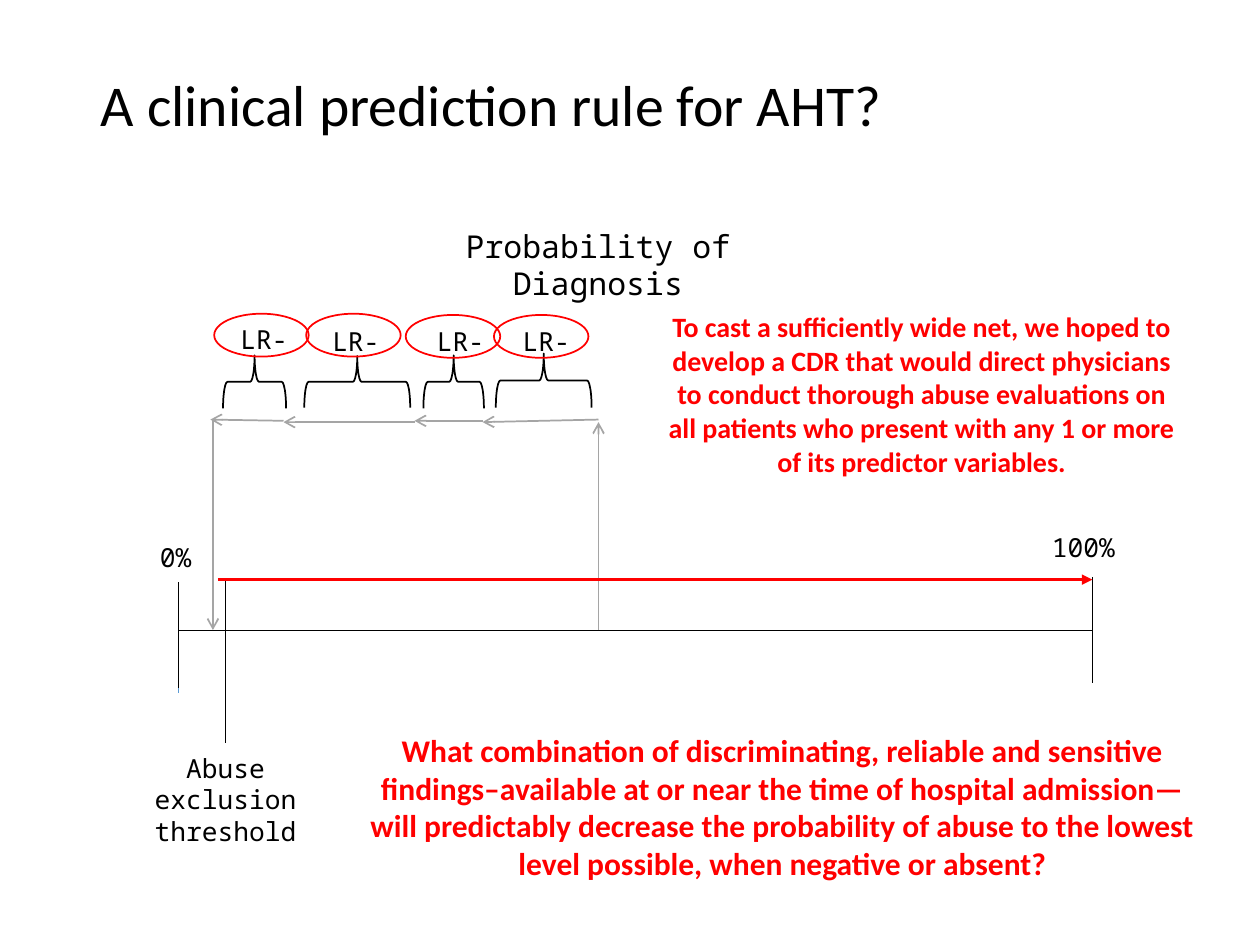
from pptx import Presentation
from pptx.dml.color import RGBColor
from pptx.enum.shapes import MSO_CONNECTOR, MSO_SHAPE
from pptx.enum.text import MSO_ANCHOR, PP_ALIGN
from pptx.oxml.ns import qn
from pptx.util import Inches, Pt
from lxml import etree

BLACK, RED, GREY, BLUE = "000000", "FF0000", "A5A5A5", "5B9BD5"
MONO, SANS = "Noto Sans Mono", "Calibri"

deck = Presentation()
deck.slide_width, deck.slide_height = Inches(10), Inches(7.5)
page = deck.slides.add_slide(deck.slide_layouts[6])


def add_text(text, left, top, width, height, size, font=MONO, color=BLACK,
             bold=False, align=PP_ALIGN.CENTER):
    box = page.shapes.add_textbox(Inches(left), Inches(top), Inches(width), Inches(height))
    box.text_frame.word_wrap = True
    para = box.text_frame.paragraphs[0]
    para.alignment = align
    span = para.add_run()
    span.text = text
    span.font.name, span.font.size, span.font.bold = font, Pt(size), bold
    span.font.color.rgb = RGBColor.from_string(color)
    return box


def add_line(x1, y1, x2, y2, color=BLACK, weight=0.5, arrow=None):
    line = page.shapes.add_connector(
        MSO_CONNECTOR.STRAIGHT, Inches(x1), Inches(y1), Inches(x2), Inches(y2))
    line.line.color.rgb = RGBColor.from_string(color)
    line.line.width = Pt(weight)
    if arrow:
        etree.SubElement(line.line._get_or_add_ln(), qn("a:tailEnd"), type=arrow)
    etree.SubElement(line._element.spPr, qn("a:effectLst"))


# Title
title = add_text("A clinical prediction rule for AHT?", 0.7, 0.5, 8.62, 0.71, 33,
                 SANS, align=PP_ALIGN.LEFT)
title.text_frame.vertical_anchor = MSO_ANCHOR.MIDDLE
title.text_frame.paragraphs[0].line_spacing = 0.9

# Probability axis with end ticks and exclusion threshold
add_text("Probability of Diagnosis", 3.12, 1.75, 3.25, 0.4, 18)
add_line(1.42, 5, 8.67, 5)
add_line(1.42, 4.67, 1.42, 5.5, BLUE)
add_line(1.42, 4.62, 1.42, 5.46)
add_line(8.67, 4.58, 8.67, 5.42)
add_line(1.79, 4.6, 1.79, 5.9)
add_text("0%", 1.17, 4.25, 0.58, 0.35, 15, align=PP_ALIGN.LEFT)
add_text("100%", 8.25, 4.17, 0.92, 0.35, 15, align=PP_ALIGN.LEFT)
add_text("Abuse exclusion threshold", 1.08, 5.92, 1.42, 0.86, 15)

# Grey path: up from the axis, left in four steps, back down
for x1, y1, x2, y2 in [
    (4.75, 5, 4.75, 3.35),
    (4.75, 3.33, 3.83, 3.35),
    (3.83, 3.34, 3.29, 3.34),
    (3.29, 3.35, 2.25, 3.35),
    (2.25, 3.34, 1.67, 3.33),
    (1.69, 3.33, 1.69, 5),
]:
    add_line(x1, y1, x2, y2, GREY, 1, "arrow")

# Likelihood ratios: label, rotated brace and red ellipse for each step
for label_left, label_top, brace, ellipse_left, ellipse_top in [
    (1.73, 2.52, (1.81, 2.78, 0.42, 0.5), 1.7, 2.49),
    (2.46, 2.53, (2.63, 2.61, 0.41, 0.84), 2.43, 2.49),
    (3.29, 2.53, (3.39, 2.79, 0.42, 0.48), 3.22, 2.5),
    (3.97, 2.53, (4.1, 2.64, 0.43, 0.76), 3.92, 2.5),
]:
    add_text("LR-", label_left, label_top, 0.73, 0.35, 15)
    for preset, place, color, angle in [
        (MSO_SHAPE.LEFT_BRACE, brace, BLACK, 90),
        (MSO_SHAPE.OVAL, (ellipse_left, ellipse_top, 0.75, 0.34), RED, 0),
    ]:
        shape = page.shapes.add_shape(preset, *[Inches(value) for value in place])
        shape.rotation = angle
        shape.shadow.inherit = False
        shape.fill.background()
        shape.line.color.rgb = RGBColor.from_string(color)
        shape.line.width = Pt(1)

# Red range arrow and comments
add_line(1.73, 4.6, 8.67, 4.6, RED, 1.5, "triangle")
add_text("What combination of discriminating, reliable and sensitive findings–available "
         "at or near the time of hospital admission—will predictably decrease the "
         "probability of abuse to the lowest level possible, when negative or absent?",
         2.75, 5.75, 6.92, 1.31, 18, SANS, RED, True)
add_text("To cast a sufficiently wide net, we hoped to develop a CDR that would direct "
         "physicians to conduct thorough abuse evaluations on all patients who present "
         "with any 1 or more of its predictor variables.",
         5.16, 2.41, 4.31, 1.45, 16, SANS, RED, True)

deck.save("out.pptx")
